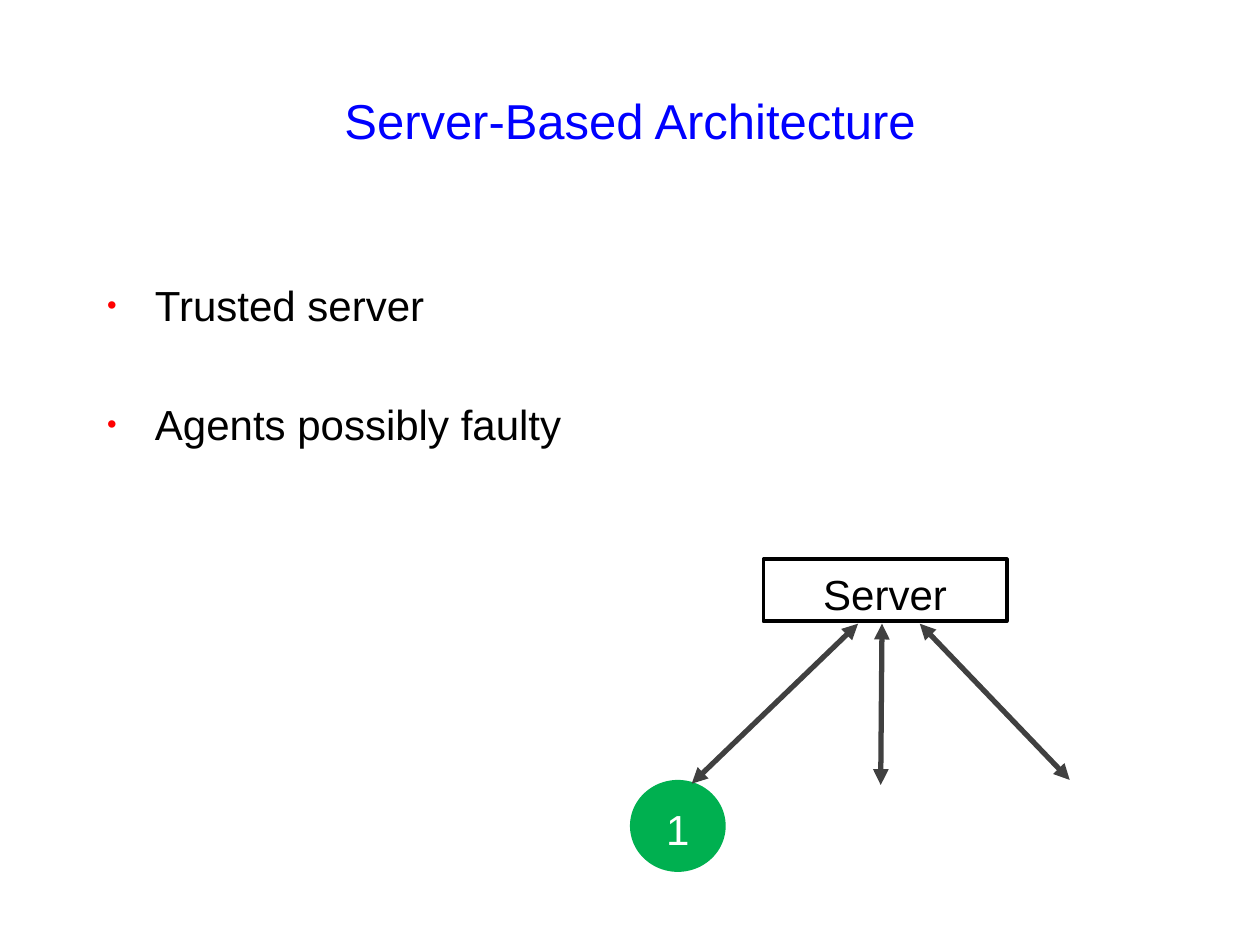
from dataclasses import dataclass

from lxml import etree
from pptx import Presentation
from pptx.dml.color import RGBColor
from pptx.enum.shapes import MSO_CONNECTOR, MSO_SHAPE
from pptx.enum.text import MSO_ANCHOR, MSO_AUTO_SIZE, PP_ALIGN
from pptx.oxml.ns import qn
from pptx.slide import Slide
from pptx.text.text import Font, _Paragraph
from pptx.util import Inches, Pt

BLUE = RGBColor(0x00, 0x00, 0xFF)
BLACK = RGBColor(0x00, 0x00, 0x00)
WHITE = RGBColor(0xFF, 0xFF, 0xFF)
GREEN = RGBColor(0x00, 0xB0, 0x50)
GRAY = RGBColor(0x40, 0x40, 0x40)
BULLET_RED = RGBColor(0xFF, 0x00, 0x00)

RECTANGLE = MSO_SHAPE.RECTANGLE
ELLIPSE = MSO_SHAPE.OVAL
STRAIGHT = MSO_CONNECTOR.STRAIGHT
MIDDLE = MSO_ANCHOR.MIDDLE
TOP = MSO_ANCHOR.TOP
CENTER = PP_ALIGN.CENTER
LEFT = PP_ALIGN.LEFT
NO_AUTOFIT = MSO_AUTO_SIZE.NONE

FONT_NAME = "Arial"
BODY_SIZE = 24


@dataclass(frozen=True)
class Node:
    text: str
    preset: MSO_SHAPE
    left: float
    top: float
    width: float
    height: float
    fill: RGBColor
    text_color: RGBColor
    outline: RGBColor | None = None
    opacity: int = 100


@dataclass(frozen=True)
class Arrow:
    start: tuple[float, float]
    end: tuple[float, float]


BULLETS = ["Trusted server", "Agents possibly faulty"]
ARROWS = [
    Arrow((6.81, 4.95), (5.49, 6.22)),
    Arrow((7.3, 4.95), (8.49, 6.19)),
    Arrow((7, 4.95), (6.99, 6.23)),
]
AGENT = Node("1", ELLIPSE, 5, 6.19, 0.76, 0.73, GREEN, WHITE)
SERVER = Node("Server", RECTANGLE, 6.06, 4.44, 1.93, 0.49, WHITE, BLACK, BLACK, 50)


def style_font(font: Font, size: float, color: RGBColor) -> None:
    font.name = FONT_NAME
    font.size = Pt(size)
    font.color.rgb = color


def place(shape, left: float, top: float, width: float, height: float) -> None:
    shape.left, shape.top = Inches(left), Inches(top)
    shape.width, shape.height = Inches(width), Inches(height)


def add_bullet(paragraph: _Paragraph) -> None:
    properties = paragraph._p.get_or_add_pPr()
    properties.set("marL", str(Inches(0.38)))
    properties.set("indent", str(-Inches(0.38)))
    color = etree.SubElement(properties, qn("a:buClr"))
    etree.SubElement(color, qn("a:srgbClr"), val=str(BULLET_RED))
    etree.SubElement(properties, qn("a:buSzPct"), val="65000")
    etree.SubElement(properties, qn("a:buFont"), typeface=FONT_NAME)
    etree.SubElement(properties, qn("a:buChar"), char="•")


def add_title(slide: Slide, text: str) -> None:
    title = slide.shapes.title
    place(title, 0.75, 0.33, 8.5, 1.25)
    text_frame = title.text_frame
    text_frame.text = text
    text_frame.auto_size = NO_AUTOFIT
    text_frame.vertical_anchor = MIDDLE
    paragraph = text_frame.paragraphs[0]
    paragraph.alignment = CENTER
    style_font(paragraph.runs[0].font, 28, BLUE)


def add_bullets(slide: Slide, items: list[str]) -> None:
    body = slide.placeholders[1]
    place(body, 0.75, 2.17, 8.5, 4.5)
    text_frame = body.text_frame
    text_frame.text = "\n".join(items)
    text_frame.auto_size = NO_AUTOFIT
    text_frame.vertical_anchor = TOP
    for index, paragraph in enumerate(text_frame.paragraphs):
        add_bullet(paragraph)
        paragraph.alignment = LEFT
        paragraph.space_before = Pt(39.3 if index else 0)
        style_font(paragraph.runs[0].font, BODY_SIZE, BLACK)


def add_node(slide: Slide, node: Node) -> None:
    shape = slide.shapes.add_shape(node.preset, 0, 0, 0, 0)
    place(shape, node.left, node.top, node.width, node.height)
    shape.shadow.inherit = False
    shape.fill.solid()
    shape.fill.fore_color.rgb = node.fill
    if node.opacity < 100:
        color = shape._element.spPr.find(qn("a:solidFill")).find(qn("a:srgbClr"))
        etree.SubElement(color, qn("a:alpha"), val=str(node.opacity * 1000))
    if node.outline is None:
        shape.line.fill.background()
    else:
        shape.line.color.rgb = node.outline
        shape.line.width = Pt(2.25)
    text_frame = shape.text_frame
    text_frame.text = node.text
    text_frame.vertical_anchor = MIDDLE
    text_frame.margin_top = Inches(0.1)
    paragraph = text_frame.paragraphs[0]
    paragraph.alignment = CENTER
    style_font(paragraph.runs[0].font, BODY_SIZE, node.text_color)


def add_arrow(slide: Slide, arrow: Arrow) -> None:
    points = [Inches(value) for value in (*arrow.start, *arrow.end)]
    connector = slide.shapes.add_connector(STRAIGHT, *points)
    connector.line.color.rgb = GRAY
    connector.line.width = Pt(3)
    line = connector.line._get_or_add_ln()
    for end in ("a:headEnd", "a:tailEnd"):
        etree.SubElement(line, qn(end), type="triangle")
    etree.SubElement(connector._element.spPr, qn("a:effectLst"))


def main() -> None:
    presentation = Presentation()
    presentation.slide_width = Inches(10)
    presentation.slide_height = Inches(7.5)
    slide = presentation.slides.add_slide(presentation.slide_layouts[1])
    add_title(slide, "Server-Based Architecture")
    add_bullets(slide, BULLETS)
    add_node(slide, AGENT)
    for arrow in ARROWS:
        add_arrow(slide, arrow)
    add_node(slide, SERVER)
    presentation.save("out.pptx")


if __name__ == "__main__":
    main()
